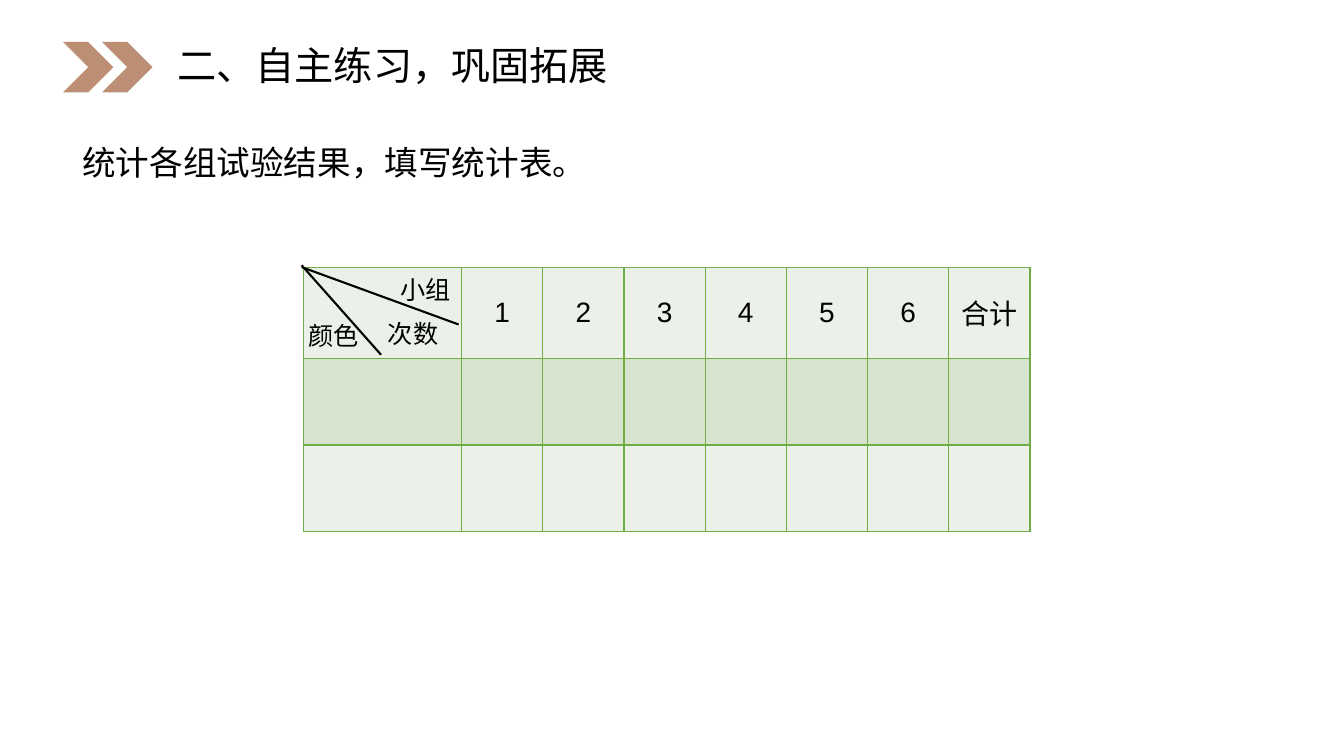
import pptx
import pptx.dml.color
import pptx.enum.shapes
import pptx.enum.text
import pptx.oxml
import pptx.oxml.ns
import pptx.util
from lxml import etree

Pt = pptx.util.Pt
Anchor = pptx.enum.text.MSO_ANCHOR
Align = pptx.enum.text.PP_ALIGN
AutoSize = pptx.enum.text.MSO_AUTO_SIZE


def color(hex_string):
    return pptx.dml.color.RGBColor.from_string(hex_string)


class SlideBuilder:
    FONT = "Arial"
    INK = "000000"
    ACCENT = "BC8E73"
    BORDER = "70AD47"
    LIGHT_ROW = "EBF1E9"
    DARK_ROW = "D5E3CF"

    def __init__(self, presentation):
        self.slide = presentation.slides.add_slide(presentation.slide_layouts[5])

    def fill_text(self, frame, text, size, align=Align.LEFT):
        """Put one styled paragraph in a text frame and return it."""
        paragraph = frame.paragraphs[0]
        paragraph.text = text
        paragraph.alignment = align
        paragraph.font.name = self.FONT
        paragraph.font.size = Pt(size)
        paragraph.font.color.rgb = color(self.INK)
        return paragraph

    def title(self, text, left, top, width, height):
        shape = self.slide.shapes.title
        shape.left, shape.top = Pt(left), Pt(top)
        shape.width, shape.height = Pt(width), Pt(height)
        frame = shape.text_frame
        frame.word_wrap = True
        frame.auto_size = AutoSize.NONE
        frame.vertical_anchor = Anchor.MIDDLE
        paragraph = self.fill_text(frame, text, 28)
        paragraph.line_spacing = 0.9
        paragraph.space_before = Pt(10)

    def text(self, text, left, top, width, height, size, wrap=False):
        shape = self.slide.shapes.add_textbox(Pt(left), Pt(top), Pt(width), Pt(height))
        frame = shape.text_frame
        frame.word_wrap = wrap
        frame.auto_size = AutoSize.SHAPE_TO_FIT_TEXT
        return self.fill_text(frame, text, size)

    def chevron(self, left, top, size):
        shape = self.slide.shapes.add_shape(
            pptx.enum.shapes.MSO_SHAPE.CHEVRON, Pt(left), Pt(top), Pt(size), Pt(size))
        shape.shadow.inherit = False
        shape.fill.solid()
        shape.fill.fore_color.rgb = color(self.ACCENT)
        shape.line.fill.background()

    def line(self, x1, y1, x2, y2):
        connector = self.slide.shapes.add_connector(
            pptx.enum.shapes.MSO_CONNECTOR.STRAIGHT, Pt(x1), Pt(y1), Pt(x2), Pt(y2))
        connector.line.color.rgb = color(self.INK)
        connector.line.width = Pt(1.5)
        etree.SubElement(connector._element.spPr, pptx.oxml.ns.qn("a:effectLst"))

    def border(self, cell):
        properties = cell._tc.get_or_add_tcPr()
        for index, side in enumerate(("lnL", "lnR", "lnT", "lnB")):
            properties.insert(index, pptx.oxml.parse_xml(
                f'<a:{side} {pptx.oxml.ns.nsdecls("a")} w="{Pt(1)}"><a:solidFill>'
                f'<a:srgbClr val="{self.BORDER}"/></a:solidFill></a:{side}>'))

    def table(self, left, top, column_widths, row_heights, header):
        table = self.slide.shapes.add_table(
            len(row_heights), len(column_widths), Pt(left), Pt(top),
            Pt(sum(column_widths)), Pt(sum(row_heights))).table
        table.first_row = table.horz_banding = False
        for column, width in zip(table.columns, column_widths):
            column.width = Pt(width)
        for index, (row, height) in enumerate(zip(table.rows, row_heights)):
            row.height = Pt(height)
            for cell in row.cells:
                cell.fill.solid()
                cell.fill.fore_color.rgb = color(self.DARK_ROW if index % 2 else self.LIGHT_ROW)
                self.border(cell)
        for cell, text in zip(table.rows[0].cells, header):
            if text:
                cell.vertical_anchor = Anchor.MIDDLE
                self.fill_text(cell.text_frame, text, 20, Align.CENTER)


def main():
    presentation = pptx.Presentation()
    presentation.slide_width, presentation.slide_height = Pt(960), Pt(540)
    builder = SlideBuilder(presentation)

    for left in (45, 73):
        builder.chevron(left, 30, 36)
    builder.title("二、自主练习，巩固拓展", 119.5, 31.7, 402.5, 33)
    instruction = builder.text("统计各组试验结果，填写统计表。", 51.8, 92.2, 474, 42.5, 24, wrap=True)
    instruction.line_spacing = 1.2
    instruction.space_before = instruction.space_after = Pt(5)

    groups = [str(number) for number in range(1, 7)]
    builder.table(216.7, 190.8, [113] + [58] * 7, [65, 62, 62], ["", *groups, "合计"])

    builder.line(215.5, 190.8, 327.6, 231.8)
    builder.line(215.5, 189.5, 272.2, 253.4)
    for label, left, top in (("颜色", 213, 225.4), ("次数", 270, 223.9), ("小组", 278.7, 192.2)):
        builder.text(label, left, top, 51, 29, 18)

    presentation.save("out.pptx")


if __name__ == "__main__":
    main()
